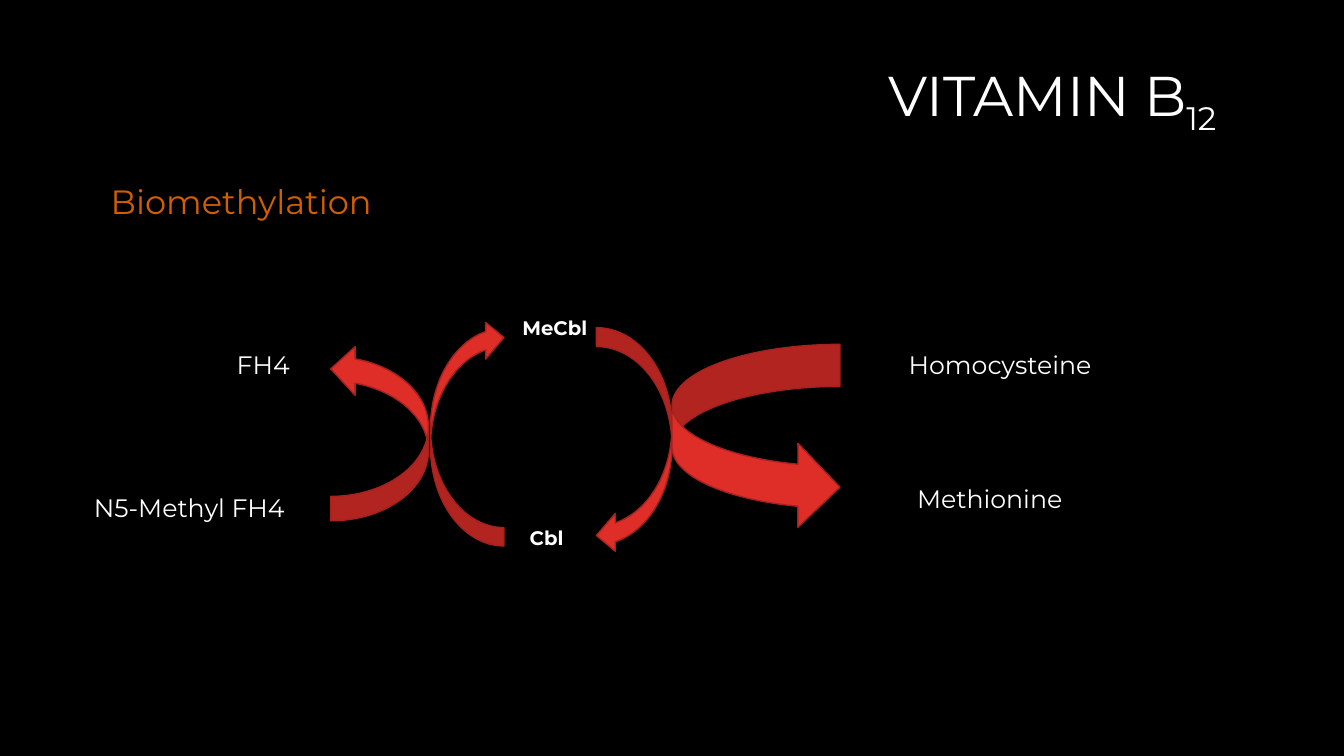
from pptx import Presentation
from pptx.dml.color import RGBColor
from pptx.enum.shapes import MSO_SHAPE
from pptx.enum.text import MSO_ANCHOR, MSO_AUTO_SIZE, PP_ALIGN
from pptx.util import Emu, Pt

BLACK = RGBColor(0x00, 0x00, 0x00)
WHITE = RGBColor(0xFF, 0xFF, 0xFF)
ORANGE = RGBColor(0xD1, 0x5E, 0x01)
RED = RGBColor(0xDF, 0x2E, 0x28)
DARK_RED = RGBColor(0xA5, 0x22, 0x1E)

CURVED_RIGHT = MSO_SHAPE.CURVED_RIGHT_ARROW
CURVED_LEFT = MSO_SHAPE.CURVED_LEFT_ARROW
MIDDLE = MSO_ANCHOR.MIDDLE
GROW = MSO_AUTO_SIZE.SHAPE_TO_FIT_TEXT
RIGHT = PP_ALIGN.RIGHT

FONT = "Montserrat"
PX = 9525


class DiagramSlide:
    """Draws text and curved arrows on one slide in a shared style."""

    def __init__(self, slide):
        self.slide = slide
        slide.background.fill.solid()
        slide.background.fill.fore_color.rgb = BLACK

    def style(self, run, size, color, bold=False):
        run.font.name = FONT
        run.font.size = Pt(size)
        run.font.color.rgb = color
        run.font.bold = bold

    def text_box(self, box, words):
        frame = self.slide.shapes.add_textbox(*(Emu(n * PX) for n in box)).text_frame
        frame.word_wrap = True
        frame.text = words
        return frame

    def title(self, box, words, subscript):
        frame = self.text_box(box, words)
        frame.vertical_anchor = MIDDLE
        heading = frame.paragraphs[0]
        heading.alignment = RIGHT
        heading.line_spacing = 0.9
        lowered = heading.add_run()
        lowered.text = subscript
        for run in heading.runs:
            self.style(run, 40, WHITE)
        lowered._r.get_or_add_rPr().set("baseline", "-25000")

    def label(self, box, words, size=18, color=WHITE, bold=False):
        frame = self.text_box(box, words)
        frame.auto_size = GROW
        self.style(frame.paragraphs[0].runs[0], size, color, bold)

    def arrow(self, preset, box, rotation=0, flipped=False):
        arrow = self.slide.shapes.add_shape(preset, *(Emu(n * PX) for n in box))
        arrow.shadow.inherit = False
        arrow.fill.solid()
        arrow.fill.fore_color.rgb = RED
        arrow.line.color.rgb = DARK_RED
        arrow.line.width = Pt(1)
        arrow.rotation = rotation
        if flipped:
            arrow._element.spPr.get_or_add_xfrm().set("flipH", "1")


def main():
    deck = Presentation()
    deck.slide_width = Emu(1280 * PX)
    deck.slide_height = Emu(720 * PX)
    diagram = DiagramSlide(deck.slides.add_slide(deck.slide_layouts[6]))

    diagram.title((264, 24, 904, 135), "VITAMIN B", "12")
    diagram.label((96, 168, 392, 48), "Biomethylation", 24, ORANGE)

    diagram.arrow(CURVED_RIGHT, (568, 312, 72, 216), flipped=True)
    diagram.arrow(CURVED_RIGHT, (410, 304, 70, 216), 180, flipped=True)
    diagram.arrow(CURVED_RIGHT, (640, 328, 160, 176))
    diagram.arrow(CURVED_LEFT, (315, 328, 93, 168), 180, flipped=True)

    for cobalamin, left, top in (("MeCbl", 488, 296), ("Cbl", 495, 496)):
        diagram.label((left, top, 88, 33), cobalamin, 14, bold=True)

    for metabolite, left, top, width in (
        ("Homocysteine", 856, 328, 224),
        ("Methionine", 864, 456, 166),
        ("N5-Methyl FH4", 80, 464, 213),
        ("FH4", 216, 328, 72),
    ):
        diagram.label((left, top, width, 38), metabolite)

    deck.save("out.pptx")


if __name__ == "__main__":
    main()
